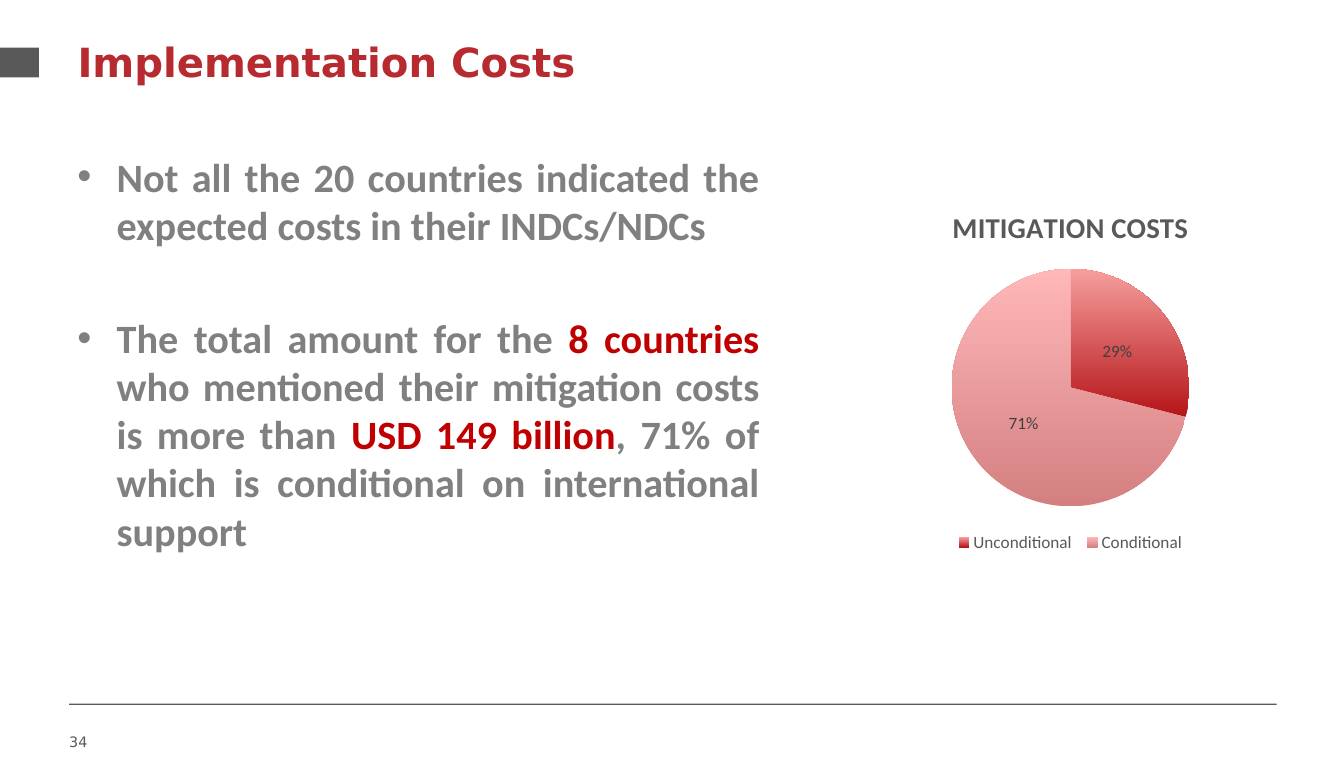
import pptx
import pptx.chart.data
import pptx.dml.color
import pptx.enum.chart
import pptx.enum.shapes
import pptx.enum.text
import pptx.oxml
import pptx.oxml.ns
import pptx.util

GREY, RED, DARK_RED = "808080", "B72A2F", "C00000"
DARK_GREY = "595959"

presentation = pptx.Presentation()
presentation.slide_width = pptx.util.Inches(13)
presentation.slide_height = pptx.util.Inches(7.5)
COLUMN = presentation.slide_width / 20
ROW = presentation.slide_height / 20


def cells(left, top, width, height):
    """Turn columns and rows of the 20 by 20 grid into lengths."""
    return [int(left * COLUMN), int(top * ROW), int(width * COLUMN), int(height * ROW)]


def style(font, color, **values):
    font.color.rgb = pptx.dml.color.RGBColor.from_string(color)
    for name, value in values.items():
        setattr(font, name, value)


slide = presentation.slides.add_slide(presentation.slide_layouts[5])

# Side marker and footer rule
for area in [(0, 1.23, 0.58, 0.77), (1.03, 18.16, 17.97, 0.03)]:
    shape = slide.shapes.add_shape(pptx.enum.shapes.MSO_SHAPE.RECTANGLE, *cells(*area))
    shape.shadow.inherit = False
    shape.fill.solid()
    shape.fill.fore_color.rgb = pptx.dml.color.RGBColor.from_string(DARK_GREY)
    shape.line.fill.background()

# Title
title = slide.shapes.title
title.left, title.top, title.width, title.height = cells(1, 0.83, 18, 2.59)
title.text_frame.text = "Implementation Costs"
title.text_frame.vertical_anchor = pptx.enum.text.MSO_ANCHOR.TOP
title.text_frame.auto_size = pptx.enum.text.MSO_AUTO_SIZE.NONE
paragraph = title.text_frame.paragraphs[0]
paragraph.alignment = pptx.enum.text.PP_ALIGN.LEFT
style(paragraph.runs[0].font, RED, name="DejaVu Sans", size=pptx.util.Pt(28), bold=True)

# Page number
page_number = slide.shapes.add_textbox(*cells(1.03, 18.8, 4.66, 1.39)).text_frame
page_number.margin_left = page_number.margin_right = 0
page_number.word_wrap = True
page_number.text = "34"
style(page_number.paragraphs[0].runs[0].font, DARK_GREY,
      name="DejaVu Sans", size=pptx.util.Pt(10))

# Bulleted findings, each a list of text and colour
findings = [
    [("Not all the 20 countries indicated the expected costs in their INDCs/NDCs", GREY)],
    [("The total amount for the ", GREY),
     ("8 countries ", DARK_RED),
     ("who mentioned their mitigation costs is more than ", GREY),
     ("USD 149 billion", DARK_RED),
     (", 71% of which is conditional on international support", GREY)],
]
body = slide.shapes.add_textbox(*cells(1, 3.79, 10.45, 12.99)).text_frame
body.word_wrap = True
indent = pptx.util.Inches(0.38)
for index, finding in enumerate(findings):
    paragraph = body.add_paragraph() if index else body.paragraphs[0]
    paragraph.alignment = pptx.enum.text.PP_ALIGN.JUSTIFY
    if index:
        paragraph.space_before = pptx.util.Pt(45)
    properties = paragraph._p.get_or_add_pPr()
    properties.set("marL", str(indent))
    properties.set("indent", str(-indent))
    namespace = pptx.oxml.ns.nsdecls("a")
    properties.append(pptx.oxml.parse_xml(f'<a:buFont {namespace} typeface="Arial"/>'))
    properties.append(pptx.oxml.parse_xml(f'<a:buChar {namespace} char="•"/>'))
    for text, color in finding:
        run = paragraph.add_run()
        run.text = text
        style(run.font, color, name="Calibri", size=pptx.util.Pt(28), bold=True)

# Mitigation cost pie
chart_data = pptx.chart.data.CategoryChartData()
chart_data.categories = ["Unconditional ", "Conditional"]
chart_data.add_series("Series 1", (29, 71))
chart = slide.shapes.add_chart(pptx.enum.chart.XL_CHART_TYPE.PIE,
                               *cells(11.86, 4.88, 8.14, 9.49), chart_data).chart
style(chart.font, "000000", name="Calibri", size=pptx.util.Pt(10))

chart.has_title = True
chart.chart_title.include_in_layout = False
chart.chart_title.text_frame.text = "MITIGATION COSTS"
style(chart.chart_title.text_frame.paragraphs[0].runs[0].font, DARK_GREY,
      name="Calibri", size=pptx.util.Pt(20), bold=True)

chart.has_legend = True
chart.legend.position = pptx.enum.chart.XL_LEGEND_POSITION.BOTTOM
chart.legend.include_in_layout = False
style(chart.legend.font, DARK_GREY, name="Calibri", size=pptx.util.Pt(12))

plot = chart.plots[0]
plot.vary_by_categories = True
plot.has_data_labels = True
labels = plot.data_labels
labels.show_percentage = True
labels.show_value = False
labels.number_format = "0%"
labels.number_format_is_linked = False
labels.position = pptx.enum.chart.XL_LABEL_POSITION.CENTER
style(labels.font, "404040", name="Calibri", size=pptx.util.Pt(12))

for index, colors in enumerate([("B51518", "F79E9E"), ("D48081", "FFB7B8")]):
    fill = plot.series[0].points[index].format.fill
    fill.gradient()
    fill.gradient_angle = 90
    for stop, color in zip(fill.gradient_stops, colors):
        stop.color.rgb = pptx.dml.color.RGBColor.from_string(color)

presentation.save("out.pptx")
